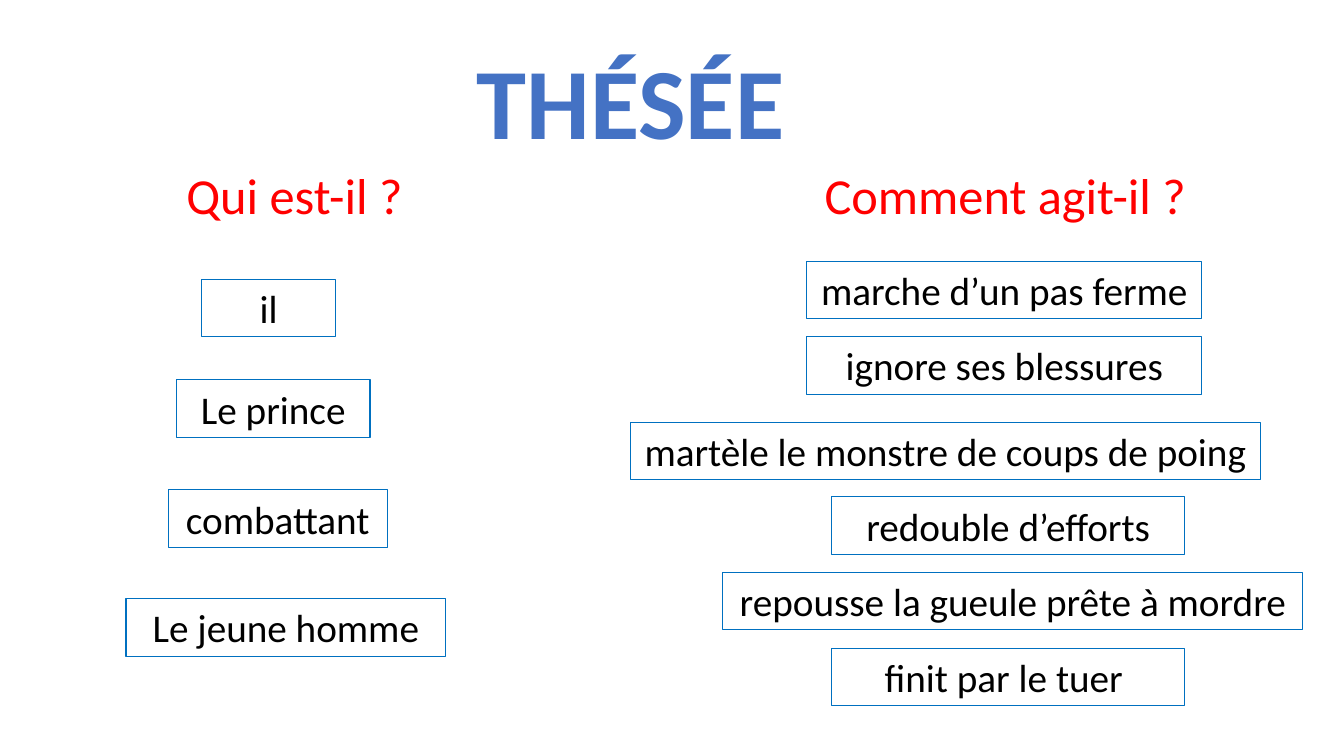
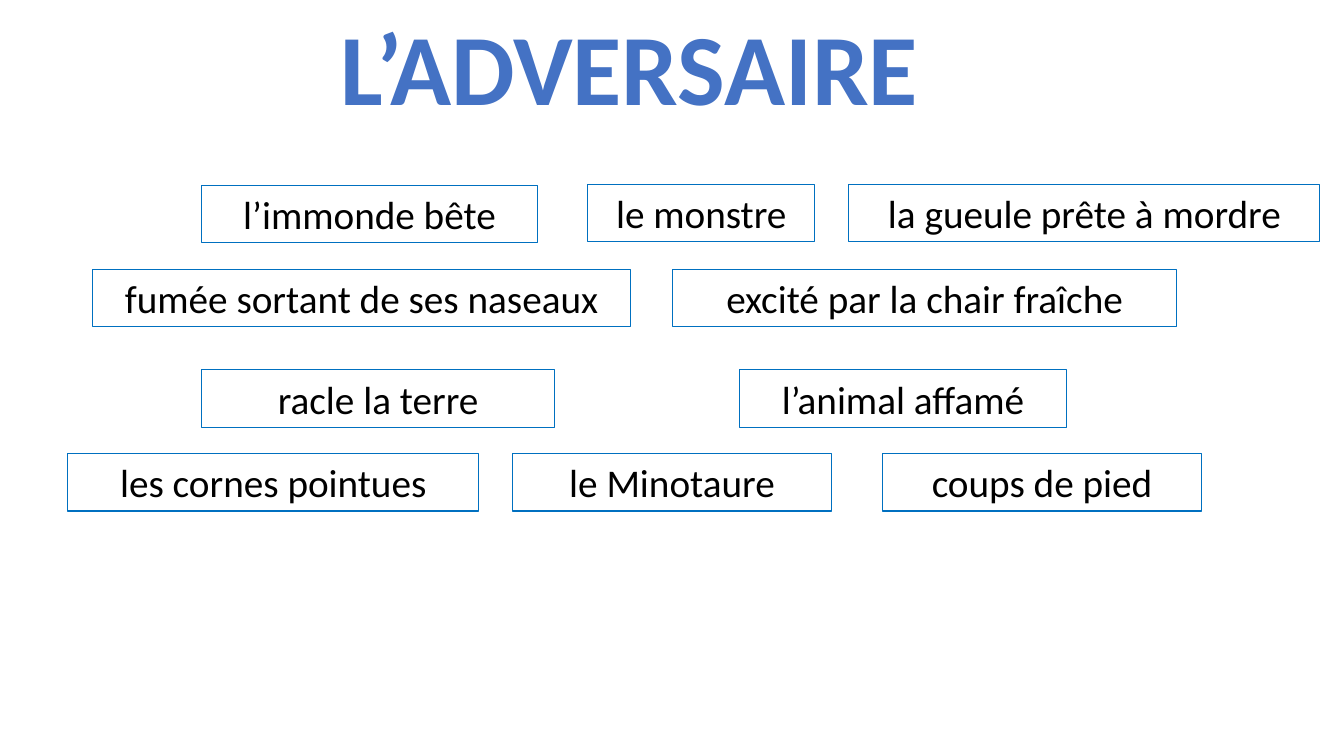
from typing import NamedTuple

from pptx import Presentation
from pptx.dml.color import RGBColor
from pptx.enum.shapes import MSO_SHAPE as Shape
from pptx.enum.text import MSO_ANCHOR as Anchor, MSO_AUTO_SIZE as AutoSize, PP_ALIGN as Align
from pptx.util import Inches, Pt

COLORS = {"title": "4472C4", "question": "FF0000", "label": "000000", "outline": "0070C0"}
FORMATS = {
    "title": {"name": "Calibri", "size": Pt(72), "bold": True},
    "question": {"name": "Calibri", "size": Pt(36)},
    "label": {"name": "Calibri", "size": Pt(28)},
}
HEIGHTS = {"title": 1.31, "question": 0.71, "label": 0.57}


class Item(NamedTuple):
    text: str
    left: float
    top: float
    width: float


class Page(NamedTuple):
    title: Item
    questions: list[Item]
    labels: list[Item]


PAGES = [
    Page(
        Item("THÉSÉE", 3.92, 0.33, 4.67),
        [
            Item("Qui est-il ?", 1.75, 1.58, 2.92),
            Item("Comment agit-il ?", 8.08, 1.58, 4),
        ],
        [
            Item("il", 2, 2.77, 1.33),
            Item("Le prince", 1.75, 3.77, 1.92),
            Item("combattant", 1.67, 4.86, 2.17),
            Item("Le jeune homme", 1.25, 5.94, 3.17),
            Item("marche d’un pas ferme", 8, 2.59, 3.92),
            Item("ignore ses blessures", 8, 3.34, 3.92),
            Item("martèle le monstre de coups de poing", 6.25, 4.19, 6.25),
            Item("redouble d’efforts", 8.25, 4.93, 3.5),
            Item("repousse la gueule prête à mordre", 7.17, 5.68, 5.75),
            Item("finit par le tuer ", 8.25, 6.43, 3.5),
        ],
    ),
    Page(
        Item("L’ADVERSAIRE", 3.08, 0, 6.33),
        [],
        [
            Item("l’immonde bête", 2, 1.84, 3.33),
            Item("le monstre", 5.83, 1.83, 2.25),
            Item("la gueule prête à mordre", 8.42, 1.83, 4.67),
            Item("fumée sortant de ses naseaux", 0.92, 2.67, 5.33),
            Item("excité par la chair fraîche", 6.67, 2.67, 5),
            Item("racle la terre", 2, 3.67, 3.5),
            Item("l’animal affamé", 7.33, 3.67, 3.25),
            Item("les cornes pointues", 0.67, 4.5, 4.08),
            Item("le Minotaure", 5.08, 4.5, 3.17),
            Item("coups de pied", 8.75, 4.5, 3.17),
        ],
    ),
]


def frame(item: Item, role: str) -> list[Inches]:
    """Return left, top, width and height of an item."""
    return [Inches(n) for n in (item.left, item.top, item.width, HEIGHTS[role])]


def write(sp, text: str, role: str, align: Align) -> None:
    tf = sp.text_frame
    settings = {"word_wrap": True, "auto_size": AutoSize.SHAPE_TO_FIT_TEXT,
                "vertical_anchor": Anchor.TOP}
    for key, value in settings.items():
        setattr(tf, key, value)
    p = tf.paragraphs[0]
    p.alignment = align
    r = p.add_run()
    r.text = text
    for key, value in FORMATS[role].items():
        setattr(r.font, key, value)
    r.font.color.rgb = RGBColor.from_string(COLORS[role])


def add_text(s, item: Item, role: str, align: Align) -> None:
    write(s.shapes.add_textbox(*frame(item, role)), item.text, role, align)


def add_label(s, item: Item) -> None:
    sp = s.shapes.add_shape(Shape.RECTANGLE, *frame(item, "label"))
    sp.shadow.inherit = False
    sp.fill.background()
    sp.line.color.rgb = RGBColor.from_string(COLORS["outline"])
    sp.line.width = Pt(0.75)
    write(sp, item.text, "label", Align.CENTER)


def main() -> None:
    prs = Presentation()
    prs.slide_width, prs.slide_height = Inches(13.33), Inches(7.5)
    for page in PAGES:
        s = prs.slides.add_slide(prs.slide_layouts[6])
        add_text(s, page.title, "title", Align.CENTER)
        for label in page.labels:
            add_label(s, label)
        for question in page.questions:
            add_text(s, question, "question", Align.LEFT)
    prs.save("out.pptx")


if __name__ == "__main__":
    main()
